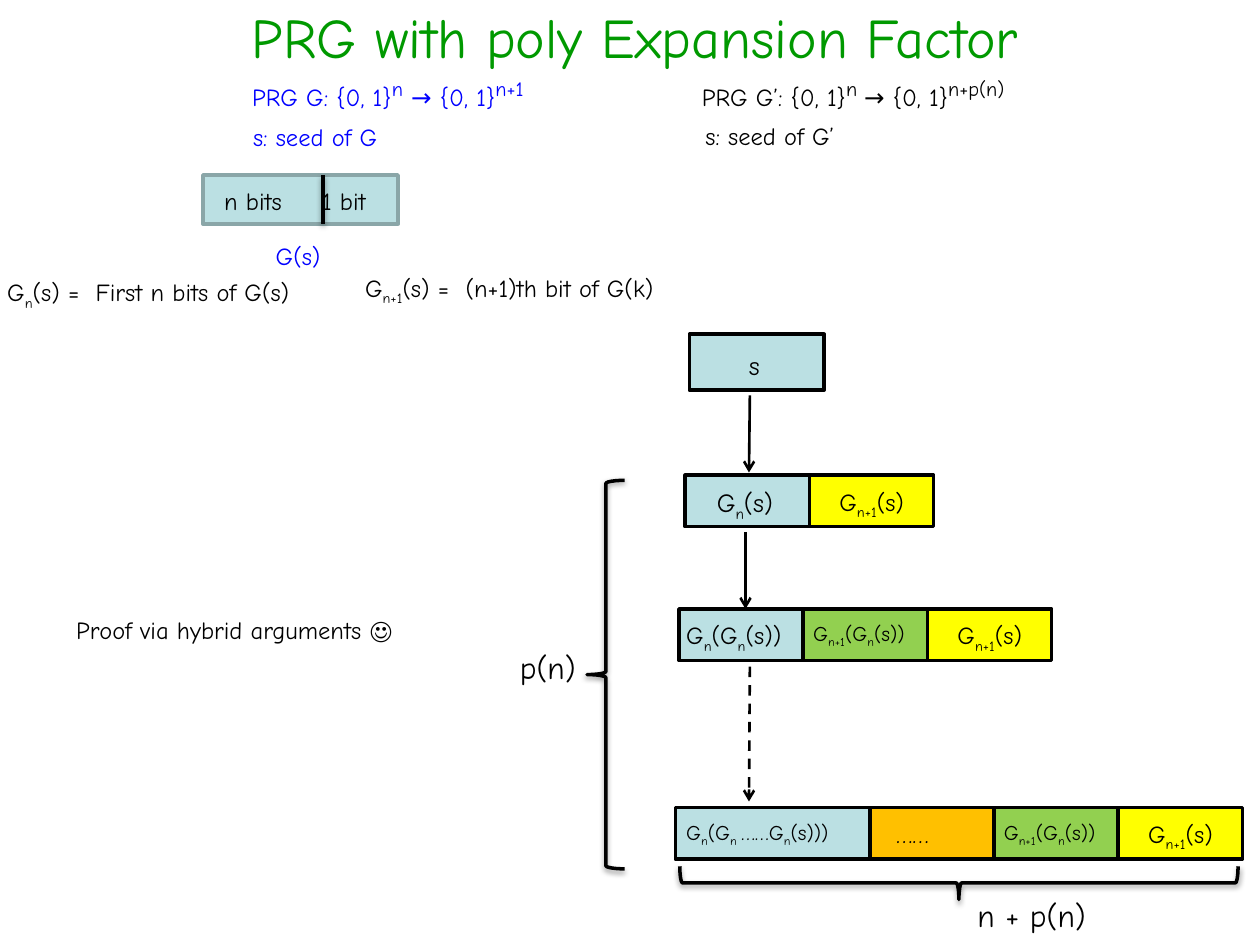
from lxml import etree
from pptx import Presentation
from pptx.dml.color import RGBColor
from pptx.enum.dml import MSO_LINE
from pptx.enum.shapes import MSO_CONNECTOR, MSO_SHAPE
from pptx.enum.text import MSO_AUTO_SIZE, PP_ALIGN
from pptx.oxml.ns import qn
from pptx.util import Pt

RECT, BRACE = MSO_SHAPE.RECTANGLE, MSO_SHAPE.LEFT_BRACE
LINE, DASH = MSO_CONNECTOR.STRAIGHT, MSO_LINE.DASH
LEFT, MID = PP_ALIGN.LEFT, PP_ALIGN.CENTER
FIT = MSO_AUTO_SIZE.SHAPE_TO_FIT_TEXT
FONT = "Comic Neue"
BLACK = RGBColor(0, 0, 0)
BLUE = RGBColor(0, 0, 255)
TITLE = RGBColor(0, 0x99, 0)
PALE = RGBColor(0xBB, 0xE0, 0xE3)
GRAY = RGBColor(0x8A, 0xA6, 0xA8)
YELLOW = RGBColor(255, 255, 0)
GREEN = RGBColor(0x92, 0xD0, 0x50)
ORANGE = RGBColor(255, 0xC0, 0)

BOXES = [
    (394, 191, 77, 32, PALE, BLACK),
    (116, 100, 111.5, 28, PALE, GRAY),
]
NOTES = [
    ("PRG with poly Expansion Factor", -8.5, -2, 743, 51, 32, TITLE, MID, True),
    ("PRG G: {0, 1}|^n| → {0, 1}|^n+1", 137, 37.5, 188, 24.5, 14, BLUE, LEFT, True),
    ("PRG G’: {0, 1}|^n |→ {0, 1}|^n+p(n)", 394, 37.5, 246, 24.5, 14, BLACK, LEFT, True),
    ("s", 392, 196, 78, 28.5, 15, BLACK, MID, True),
    ("s: seed of G", 137.5, 66, 90.5, 24.5, 14, BLUE, LEFT, False),
    ("s: seed of G’", 396, 65.5, 93, 24.5, 14, BLACK, LEFT, False),
    ("G|_n|(s) =  First n bits of G(s)", -3, 155, 178, 24.5, 14, BLACK, LEFT, False),
    ("G|_n+1|(s) =  (n+1)th bit of G(k)", 201.5, 152.5, 187, 24.5, 14, BLACK, LEFT, False),
    ("n bits", 121, 103, 62, 24.5, 14, BLACK, LEFT, True),
    ("1 bit", 177, 103, 50, 24.5, 14, BLACK, LEFT, True),
    ("G(s)", 150.5, 134, 42, 24.5, 14, BLUE, LEFT, False),
    ("p(n)", 290, 366.5, 47, 29, 18, BLACK, LEFT, False),
    ("n + p(n)", 551.5, 508.5, 78, 29, 18, BLACK, LEFT, False),
    ("Proof via hybrid arguments ☺", 36.5, 348, 199, 24.5, 14, BLACK, LEFT, False),
]
LAST = ("G|_n+1|(s)", 71, YELLOW, 14, 10)
NEXT = ("G|_n+1|(G|_n|(s))", 71, GREEN, 12, -1.5)
ROWS = [
    (391.5, 271.5, [("G|_n|(s)", 71, PALE, 15, 11), LAST]),
    (388, 348, [("G|_n|(G|_n|(s))", 71, PALE, 14, -3), NEXT, LAST]),
    (386, 461.5, [("G|_n|(G|_n |……G|_n|(s)))", 111, PALE, 12, -1),
                  ("……", 71, ORANGE, 14, 8), NEXT, LAST]),
]
ROW_H = 29.5
ARROWS = [
    (428.5, 226, 428, 270, None),
    (426, 304, 426, 348, None),
    (428.5, 381, 428, 458, DASH),
]
BRACES = [(335.5, 274.5, 21.5, 222, 0), (538.5, 345, 19, 319, 270)]

prs = Presentation()
prs.slide_width, prs.slide_height = Pt(720), Pt(540)
slide = prs.slides.add_slide(prs.slide_layouts[6])
shapes = slide.shapes


def effect(shape, shade=False):
    node = etree.SubElement(shape._element.spPr, qn("a:effectLst"))
    if shade:
        cast = etree.SubElement(node, qn("a:outerShdw"), blurRad="40000",
                                dist="20000", dir="5400000", rotWithShape="0")
        tone = etree.SubElement(cast, qn("a:srgbClr"), val="000000")
        etree.SubElement(tone, qn("a:alpha"), val="38000")


def box(x, y, w, h, fill, edge):
    rect = shapes.add_shape(RECT, Pt(x), Pt(y), Pt(w), Pt(h))
    rect.shadow.inherit = False
    rect.fill.solid()
    rect.fill.fore_color.rgb = fill
    rect.line.color.rgb = edge
    rect.line.width = Pt(2)


def note(text, x, y, w, h, size, color, align, wrap):
    frame = shapes.add_textbox(Pt(x), Pt(y), Pt(w), Pt(h)).text_frame
    frame.word_wrap = wrap
    frame.auto_size = FIT
    para = frame.paragraphs[0]
    para.alignment = align
    for part in text.split("|"):
        run = para.add_run()
        run.text = part.lstrip("_^")
        font = run.font
        font.name, font.size = FONT, Pt(size)
        font.color.rgb = color
        if part[0] == "_":
            font._element.set("baseline", "-25000")
        elif part[0] == "^":
            font.size = Pt(20)
            font._element.set("baseline", "30000")


def link(x1, y1, x2, y2, width):
    line = shapes.add_connector(LINE, Pt(x1), Pt(y1), Pt(x2), Pt(y2))
    line.line.color.rgb = BLACK
    line.line.width = Pt(width)
    return line


for item in BOXES:
    box(*item)

for x, y, cells in ROWS:
    for text, w, fill, size, shift in cells:
        box(x, y, w, ROW_H, fill, BLACK)
        note(text, x + shift, y + 3, w + 16, 24.5, size, BLACK, LEFT, True)
        x += w

for item in NOTES:
    note(*item)

effect(link(184.5, 100, 184.5, 128, 2), True)

for x1, y1, x2, y2, dash in ARROWS:
    arrow = link(x1, y1, x2, y2, 1.5)
    if dash:
        arrow.line.dash_style = dash
    etree.SubElement(arrow.line._get_or_add_ln(), qn("a:tailEnd"), type="arrow")
    effect(arrow)

for x, y, w, h, turn in BRACES:
    brace = shapes.add_shape(BRACE, Pt(x), Pt(y), Pt(w), Pt(h))
    brace.rotation = turn
    brace.fill.background()
    brace.line.color.rgb = BLACK
    brace.line.width = Pt(2)
    effect(brace, True)

prs.save("out.pptx")
